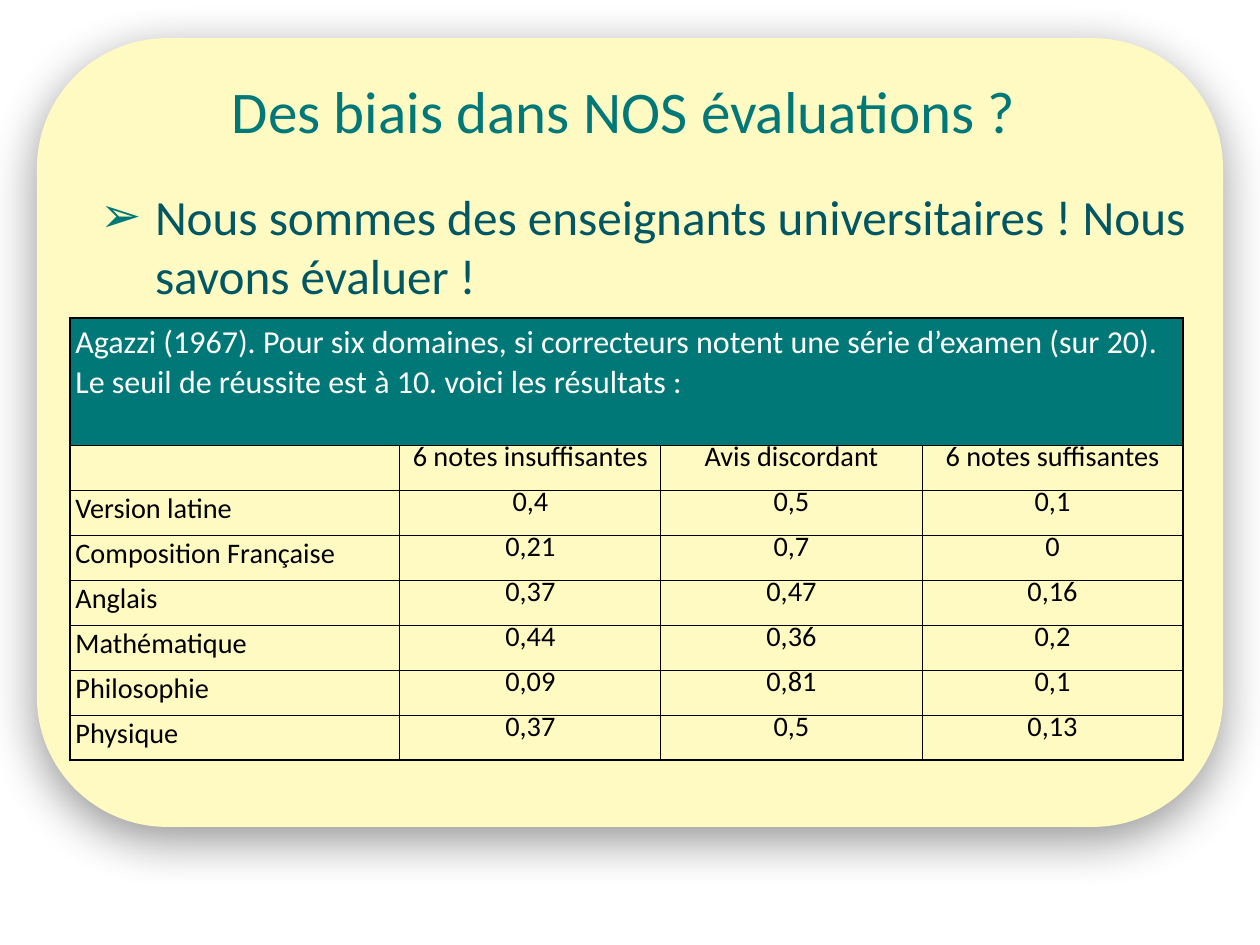
from dataclasses import dataclass

from lxml.etree import SubElement
from pptx import Presentation
from pptx.dml.color import RGBColor as Color
from pptx.enum.shapes import MSO_SHAPE as Shape
from pptx.enum.text import MSO_ANCHOR as Anchor, PP_ALIGN as Align
from pptx.oxml.ns import qn
from pptx.util import Pt


@dataclass(frozen=True)
class Theme:
    font: str = "Calibri"
    cream: str = "FFFAC2"
    teal: str = "007878"
    body: str = "005764"
    white: str = "FFFFFF"
    black: str = "000000"
    title_size: int = 48
    body_size: int = 40
    heading_size: int = 26
    cell_size: int = 23
    inset: float = 4.3
    thin: float = 1
    thick: float = 2.25


class SlideBuilder:
    def __init__(self, slide, theme):
        self.slide = slide
        self.theme = theme

    def add_run(self, paragraph, text, size, color):
        run = paragraph.add_run()
        run.text = text
        run.font.name = self.theme.font
        run.font.size = Pt(size)
        run.font.color.rgb = Color.from_string(color)

    def set_margins(self, target, inset):
        target.margin_left = target.margin_right = Pt(inset)
        target.margin_top = target.margin_bottom = Pt(inset)

    def add_panel(self, bounds, radius):
        shape = self.slide.shapes.add_shape(Shape.ROUNDED_RECTANGLE, *map(Pt, bounds))
        shape.adjustments[0] = radius
        shape.fill.solid()
        shape.fill.fore_color.rgb = Color.from_string(self.theme.cream)
        shape.line.fill.background()
        shape.shadow.inherit = False
        effects = shape.element.spPr.find(qn("a:effectLst"))
        shadow = SubElement(effects, qn("a:outerShdw"), blurRad=str(Pt(40)),
                            dist=str(Pt(11)), dir="5400000", rotWithShape="0")
        shade = SubElement(shadow, qn("a:srgbClr"), val=self.theme.black)
        SubElement(shade, qn("a:alpha"), val="42000")

    def add_text(self, bounds, text, size, color, inset=0, anchor=Anchor.TOP,
                 align=Align.LEFT, bullet=None):
        frame = self.slide.shapes.add_textbox(*map(Pt, bounds)).text_frame
        frame.word_wrap = True
        frame.vertical_anchor = anchor
        self.set_margins(frame, inset)
        paragraph = frame.paragraphs[0]
        paragraph.alignment = align
        if bullet:
            self.add_bullet(paragraph, bullet)
        self.add_run(paragraph, text, size, color)

    def add_bullet(self, paragraph, symbol):
        properties = paragraph._p.get_or_add_pPr()
        properties.set("marL", str(Pt(73.5)))
        properties.set("indent", str(Pt(-44.5)))
        color = SubElement(properties, qn("a:buClr"))
        SubElement(color, qn("a:srgbClr"), val=self.theme.teal)
        SubElement(properties, qn("a:buFont"), typeface=self.theme.font)
        SubElement(properties, qn("a:buChar"), char=symbol)

    def add_borders(self, cell, thick_sides):
        properties = cell._tc.get_or_add_tcPr()
        for side in "LRTB":
            width = self.theme.thick if side in thick_sides else self.theme.thin
            line = SubElement(properties, qn(f"a:ln{side}"), w=str(Pt(width)))
            fill = SubElement(line, qn("a:solidFill"))
            SubElement(fill, qn("a:srgbClr"), val=self.theme.black)

    def add_table(self, bounds, heading, rows, widths, heights):
        theme = self.theme
        table = self.slide.shapes.add_table(len(heights), len(widths), *map(Pt, bounds)).table
        table.first_row = table.horz_banding = False
        for column, width in zip(table.columns, widths):
            column.width = Pt(width)
        for row, height in zip(table.rows, heights):
            row.height = Pt(height)
        last_row, last_column = len(heights) - 1, len(widths) - 1
        for row in range(len(heights)):
            for column in range(len(widths)):
                cell = table.cell(row, column)
                edges = {"L": column == 0, "R": column == last_column,
                         "T": row == 0, "B": row == last_row}
                if row == 0:
                    edges.update(L=True, R=True)
                self.add_borders(cell, [side for side, outer in edges.items() if outer])
                self.set_margins(cell, theme.inset)
                if row == 0:
                    cell.fill.solid()
                    cell.fill.fore_color.rgb = Color.from_string(theme.teal)
                else:
                    cell.fill.background()
                    self.fill_cell(cell, rows[row - 1][column], is_label=column == 0)
        title_cell = table.cell(0, 0)
        title_cell.merge(table.cell(0, last_column))
        self.add_run(title_cell.text_frame.paragraphs[0], heading,
                     theme.heading_size, theme.white)

    def fill_cell(self, cell, text, is_label):
        if not text:
            return
        cell.vertical_anchor = Anchor.MIDDLE if is_label else Anchor.TOP
        paragraph = cell.text_frame.paragraphs[0]
        paragraph.alignment = Align.LEFT if is_label else Align.CENTER
        paragraph.line_spacing = 0.58
        self.add_run(paragraph, text, self.theme.cell_size, self.theme.black)


HEADING = ("Agazzi (1967). Pour six domaines, si correcteurs notent une série d’examen "
           "(sur 20). Le seuil de réussite est à 10. voici les résultats :")
RESULTS = [
    ("", "6 notes insuffisantes", "Avis discordant", "6 notes suffisantes"),
    ("Version latine", "0,4", "0,5", "0,1"),
    ("Composition Française", "0,21", "0,7", "0"),
    ("Anglais", "0,37", "0,47", "0,16"),
    ("Mathématique", "0,44", "0,36", "0,2"),
    ("Philosophie", "0,09", "0,81", "0,1"),
    ("Physique", "0,37", "0,5", "0,13"),
]


def main():
    presentation = Presentation()
    presentation.slide_width, presentation.slide_height = Pt(1024), Pt(768)
    theme = Theme()
    builder = SlideBuilder(presentation.slides.add_slide(presentation.slide_layouts[6]), theme)
    builder.add_panel((30, 31, 964, 641), 0.165)
    builder.add_text((100, 26, 814, 126), "Des biais dans NOS évaluations ?",
                     theme.title_size, theme.teal, inset=theme.inset,
                     anchor=Anchor.MIDDLE, align=Align.CENTER)
    builder.add_text((52.5, 151.5, 924.5, 616),
                     "Nous sommes des enseignants universitaires ! Nous savons évaluer !",
                     theme.body_size, theme.body, bullet="➢")
    widths = [268] + [212.2] * 3
    heights = [103.4] + [36.55] * len(RESULTS)
    builder.add_table((57, 258.5, sum(widths), sum(heights)), HEADING, RESULTS, widths, heights)
    presentation.save("out.pptx")


if __name__ == "__main__":
    main()
